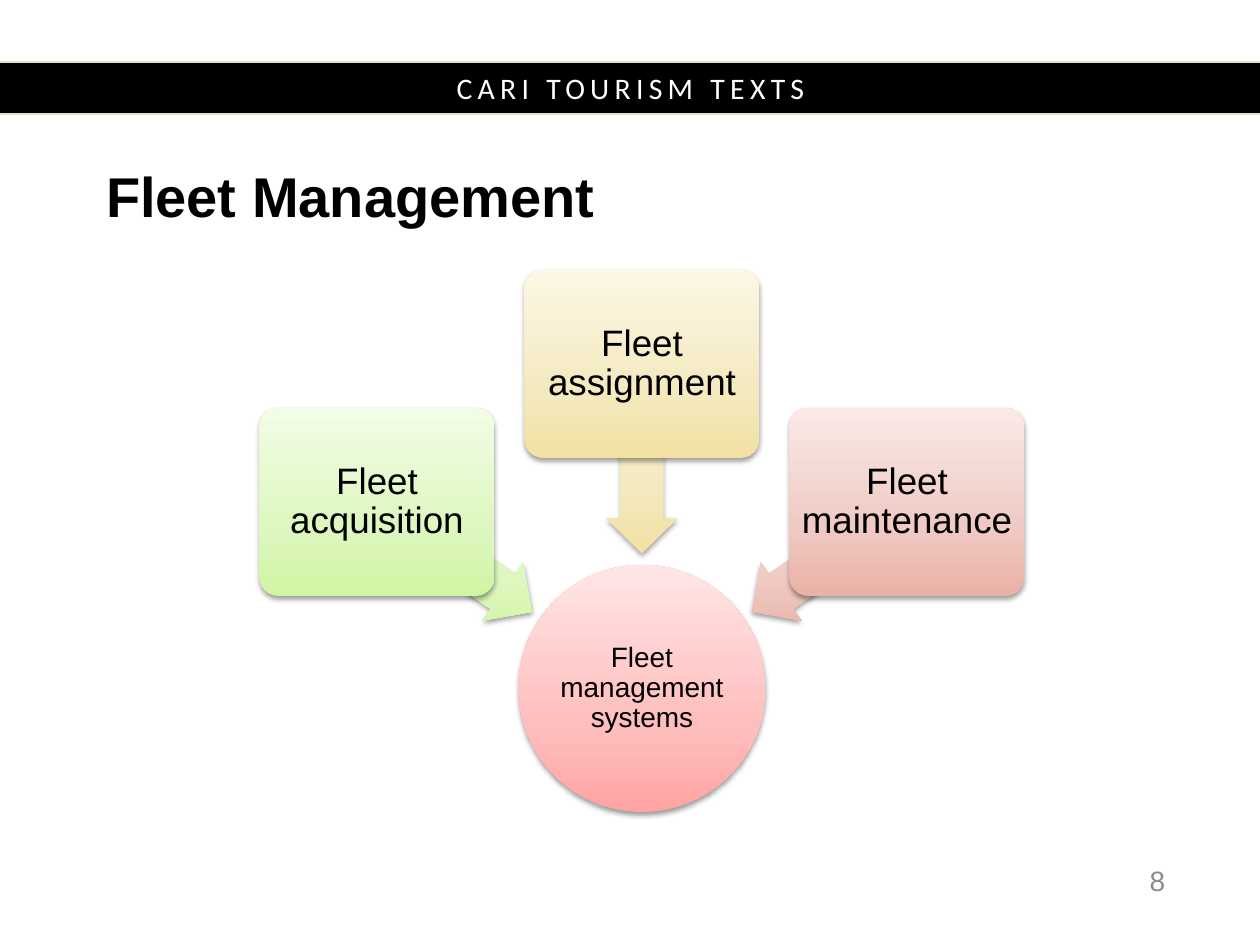
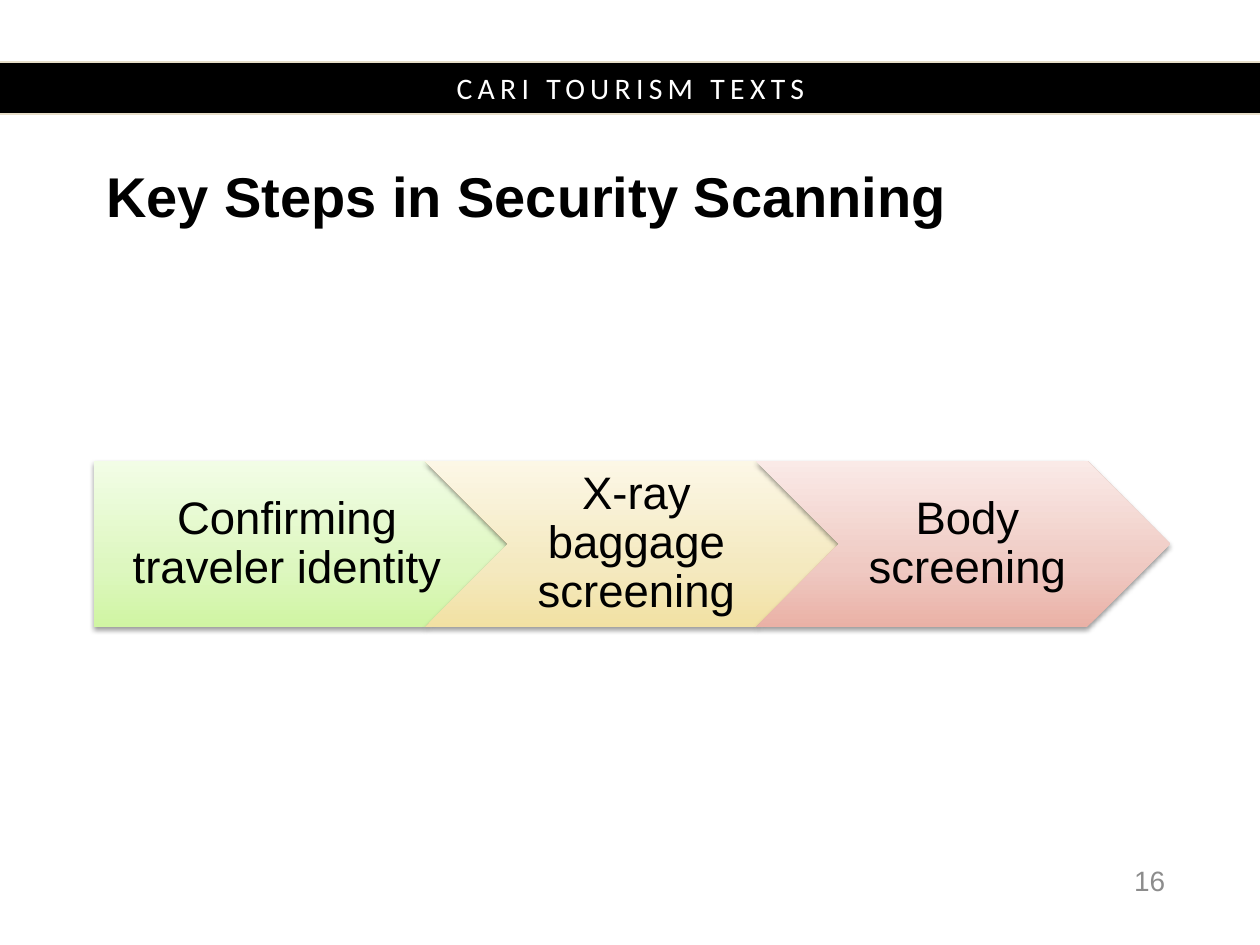
import pptx
import pptx.util
import pptx.oxml
import pptx.dml.color
import pptx.enum.shapes
import pptx.enum.text

SCALE = 914400 / 126
WIDE, HIGH = 1260, 945
NS = 'xmlns:a="http://schemas.openxmlformats.org/drawingml/2006/main"'
KIND = pptx.enum.shapes.MSO_SHAPE
ALIGN = pptx.enum.text.PP_ALIGN

COLORS = {"black": "000000", "white": "FFFFFF", "gray": "8C8C8C", "sand": "E7DEC9"}
FADES = {
    "pink": ("FFA3A3", "FFBEBE", "FFE6E6"),
    "green": ("D0F5A3", "DDF7BF", "F2FDE6"),
    "gold": ("F2E1A3", "F4E9BF", "FCF7E6"),
    "rose": ("EAB1A6", "EFC9C2", "FAEAE7"),
}
STOPS = (0, 35, 100)

BAND = "CARI TOURISM TEXTS"
FLEET = {
    "title": "Fleet Management",
    "page": "8",
    "hub": "Fleet management systems",
    # label, fade, column from the centre, box top, arrow top, arrow turn
    "parts": [
        ("Fleet acquisition", "green", -1, 408, 522, 215),
        ("Fleet assignment", "gold", 0, 270, 423, 270),
        ("Fleet maintenance", "rose", 1, 408, 522, 325),
    ],
}
SCAN = {
    "title": "Key Steps in Security Scanning",
    "page": "16",
    "steps": [
        ("Confirming traveler identity", "green"),
        ("X-ray baggage screening", "gold"),
        ("Body screening", "rose"),
    ],
}

STYLES = {
    "band": {"size": 17, "name": "Calibri", "color": "white"},
    "title": {"size": 32, "name": "Arial", "color": "black", "bold": True},
    "page": {"size": 16, "name": "Arial", "color": "gray"},
    "hub": {"size": 16, "name": "Arial", "color": "black"},
    "part": {"size": 21, "name": "Arial", "color": "black"},
    "step": {"size": 26, "name": "Arial", "color": "black"},
}


def px(num):
    return pptx.util.Emu(round(num * SCALE))


def rgb(name):
    return pptx.dml.color.RGBColor.from_string(COLORS[name])


def write(shape, text, style, align=ALIGN.CENTER, pads=(13, 6, 13, 6), gap=None):
    frame = shape.text_frame
    frame.word_wrap = True
    frame.vertical_anchor = pptx.enum.text.MSO_ANCHOR.MIDDLE
    for side, pad in zip(("left", "top", "right", "bottom"), pads):
        setattr(frame, "margin_" + side, px(pad))
    para = frame.paragraphs[0]
    para.alignment = align
    if gap:
        para.line_spacing = gap
    run = para.add_run()
    run.text = text
    for key, val in STYLES[style].items():
        if key == "color":
            run.font.color.rgb = rgb(val)
        else:
            setattr(run.font, key, pptx.util.Pt(val) if key == "size" else val)
    return run


def label(slide, at, text, style, **opts):
    box = slide.shapes.add_textbox(*map(px, at))
    write(box, text, style, **opts)


def block(slide, kind, at, fade, turn=0, adjust=()):
    """Add a shape with an upright gradient and a soft shadow."""
    shape = slide.shapes.add_shape(kind, *map(px, at))
    shape.rotation = turn
    for i, val in enumerate(adjust):
        shape.adjustments[i] = val
    shape.line.fill.background()
    shape.shadow.inherit = False
    stops = "".join(
        f'<a:gs pos="{pos * 1000}"><a:srgbClr val="{color}"/></a:gs>'
        for pos, color in zip(STOPS, FADES[fade])
    )
    grad = pptx.oxml.parse_xml(
        f'<a:gradFill {NS} rotWithShape="0"><a:gsLst>{stops}</a:gsLst>'
        '<a:lin ang="16200000" scaled="0"/></a:gradFill>'
    )
    props = shape.element.spPr
    props.insert(2, grad)
    shade = pptx.oxml.parse_xml(
        f'<a:outerShdw {NS} blurRad="39370" dist="20320" dir="5400000" '
        'rotWithShape="0"><a:srgbClr val="000000"><a:alpha val="38000"/>'
        "</a:srgbClr></a:outerShdw>"
    )
    props[-1].append(shade)


def start(deck, data):
    """Add a slide with its band, title and page number."""
    slide = deck.slides.add_slide(deck.slide_layouts[6])
    band = slide.shapes.add_shape(KIND.RECTANGLE, *map(px, (-10, 62, 1281, 52)))
    band.shadow.inherit = False
    band.fill.solid()
    band.fill.fore_color.rgb = rgb("black")
    band.line.color.rgb = rgb("sand")
    band.line.width = pptx.util.Pt(0.75)
    run = write(band, BAND, "band")
    run.font._element.set("spc", "300")
    label(slide, (93, 171, 1079, 60), data["title"], "title",
          align=ALIGN.LEFT, gap=pptx.util.Pt(32))
    label(slide, (884, 855, 294, 50), data["page"], "page", align=ALIGN.RIGHT)
    return slide


def fleet(deck):
    slide = start(deck, FLEET)
    mid, top, size, inset = 642, 565, 247, 36
    left = mid - size / 2
    block(slide, KIND.OVAL, (left, top, size, size), "pink")
    inner = size - 2 * inset
    label(slide, (left + inset, top + inset, inner, inner), FLEET["hub"], "hub",
          pads=(1, 1, 1, 1), gap=0.9)
    wide, high, pitch, edge = 235, 188, 265, 6
    reach, thick, shift = 190, 71, 188
    for text, fade, col, top, tip, turn in FLEET["parts"]:
        spot = (mid + col * shift - reach / 2, tip, reach, thick)
        block(slide, KIND.LEFT_ARROW, spot, fade, turn, (0.6, 0.5))
        left = mid + col * pitch - wide / 2
        block(slide, KIND.ROUNDED_RECTANGLE, (left, top, wide, high), fade,
              adjust=(0.1,))
        label(slide, (left + edge, top + edge, wide - 2 * edge, high - 2 * edge),
              text, "part", pads=(5, 5, 5, 5), gap=0.9)


def scan(deck):
    slide = start(deck, SCAN)
    left, top, wide, high = 94, 461, 414, 166
    notch = high / 2
    for i, (text, fade) in enumerate(SCAN["steps"]):
        x = left + i * (wide - notch)
        kind = KIND.CHEVRON if i else KIND.PENTAGON
        block(slide, kind, (x, top, wide, high), fade)
        if i:
            spot, pad = (x + notch, top, wide - 2 * notch, high), 14
        else:
            spot, pad = (x, top, wide - notch / 2, high), 19
        label(slide, spot, text, "step", pads=(pad, 10, 5, 10), gap=0.9)


def main():
    deck = pptx.Presentation()
    deck.slide_width, deck.slide_height = px(WIDE), px(HIGH)
    fleet(deck)
    scan(deck)
    deck.save("out.pptx")


if __name__ == "__main__":
    main()
